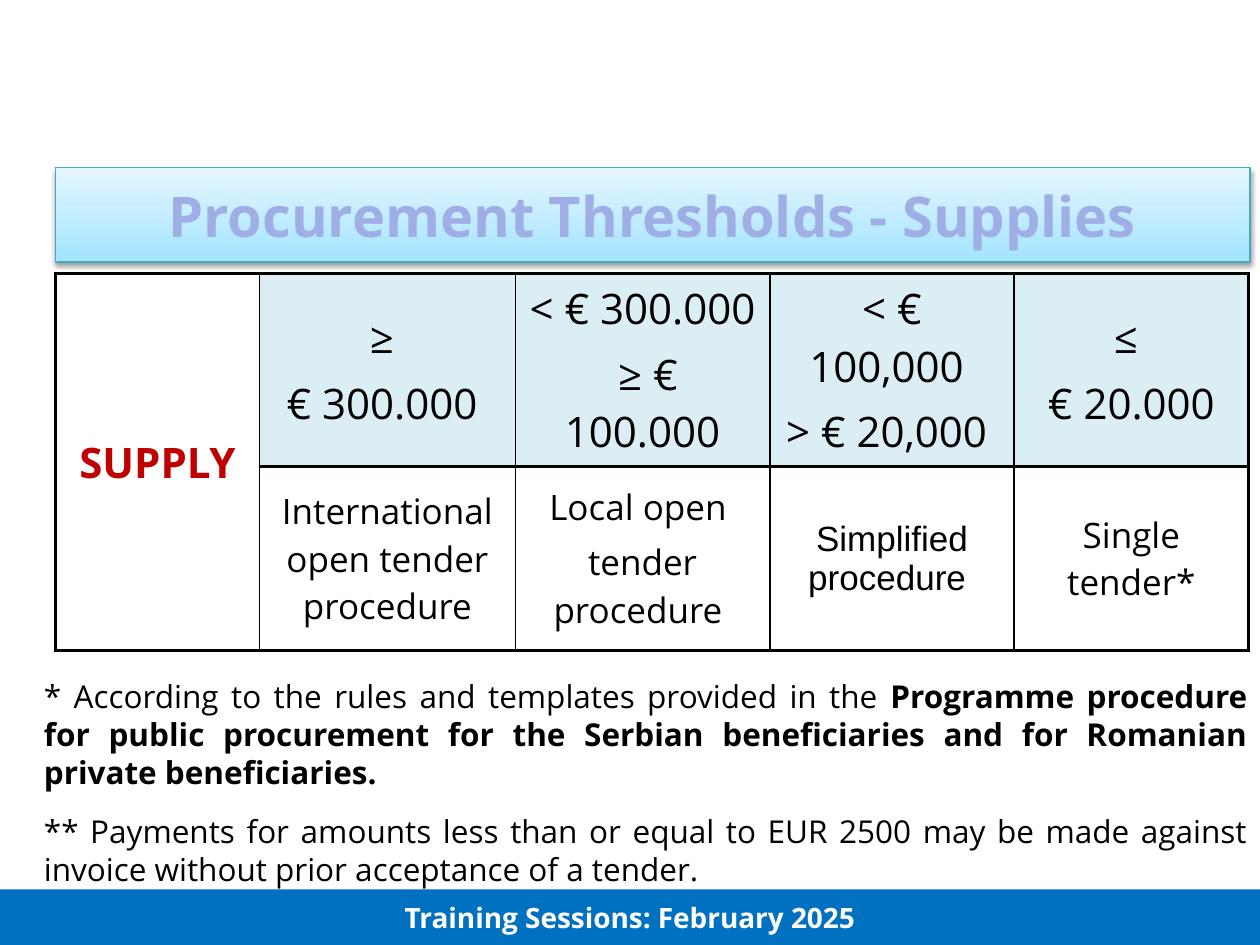
import dataclasses
import typing

import pptx
import pptx.dml.color
import pptx.enum.shapes
import pptx.enum.text
import pptx.oxml
import pptx.oxml.ns
import pptx.util

Inches = pptx.util.Inches
Pt = pptx.util.Pt
Align = pptx.enum.text.PP_ALIGN
MIDDLE = pptx.enum.text.MSO_ANCHOR.MIDDLE


@dataclasses.dataclass(frozen=True)
class Theme:
    font: str = "Open Sans"
    alternate_font: str = "Arial"
    black: str = "000000"
    white: str = "FFFFFF"
    supply_red: str = "C00000"
    threshold_fill: str = "DBEEF4"
    footer_blue: str = "0070C0"
    title_text: str = "9FAEE5"
    title_top: str = "E5F6FF"
    title_bottom: str = "A3E4FF"
    title_edge: str = "46AAC5"
    title_size: float = 32
    threshold_size: float = 24
    procedure_size: float = 20
    note_size: float = 18
    footer_size: float = 16
    thin: float = 1
    thick: float = 2.25


THEME = Theme()


@dataclasses.dataclass(frozen=True)
class Tender:
    width: float
    thresholds: tuple[str, ...]
    procedure: tuple[str, ...]
    procedure_font: str = THEME.font


TENDERS = (
    Tender(2.03, ("≥ ", "€ 300.000 "), ("International open tender procedure",)),
    Tender(2.02, ("< € 300.000 ", " ≥ € 100.000"), ("Local open ", "tender procedure ")),
    Tender(1.94, ("< € 100,000 ", "> € 20,000 "), ("Simplified procedure ",), THEME.alternate_font),
    Tender(1.86, ("≤ ", "€ 20.000"), ("Single tender*",)),
)
SUPPLY_WIDTH = 1.62
ROW_HEIGHTS = (1.26, 1.46)

NOTES = (
    (
        ("* According to the rules and templates provided in the ", False),
        ("Programme procedure for public procurement for the Serbian beneficiaries "
         "and for Romanian private beneficiaries.", True),
    ),
    (
        ("** Payments for amounts less than or equal to EUR 2500 may be made against "
         "invoice without prior acceptance of a tender.", False),
    ),
)


def rgb(value: str) -> pptx.dml.color.RGBColor:
    return pptx.dml.color.RGBColor.from_string(value)


def write(frame, paragraphs: typing.Sequence, *, size: float, color: str = THEME.black,
          font: str = THEME.font, bold: bool = False, align=Align.CENTER,
          gap: float = 0) -> None:
    """Fill a text frame; a paragraph is a string or a series of (text, bold) runs."""
    frame.word_wrap = True
    for index, content in enumerate(paragraphs):
        paragraph = frame.add_paragraph() if index else frame.paragraphs[0]
        paragraph.alignment = align
        paragraph.space_before = Pt(gap if index else 0)
        runs = ((content, bold),) if isinstance(content, str) else content
        for text, run_bold in runs:
            run = paragraph.add_run()
            run.text = text
            run.font.name = font
            run.font.size = Pt(size)
            run.font.bold = run_bold
            run.font.color.rgb = rgb(color)


def add_title(slide) -> None:
    title = slide.shapes.title
    title.left, title.top = Inches(0.44), Inches(1.33)
    title.width, title.height = Inches(9.48), Inches(0.75)
    title.fill.gradient()
    title.fill.gradient_angle = 270
    for stop, color in zip(title.fill.gradient_stops, (THEME.title_top, THEME.title_bottom)):
        stop.color.rgb = rgb(color)
    title.fill.gradient_stops[0].position = 0
    title.fill.gradient_stops[1].position = 1
    title.line.color.rgb = rgb(THEME.title_edge)
    title.line.width = Pt(0.75)
    title._element.spPr.append(pptx.oxml.parse_xml(
        f'<a:effectLst {pptx.oxml.ns.nsdecls("a")}>'
        '<a:outerShdw blurRad="40000" dist="20000" dir="5400000" rotWithShape="0">'
        f'<a:srgbClr val="{THEME.black}"><a:alpha val="38000"/></a:srgbClr>'
        '</a:outerShdw></a:effectLst>'))
    frame = title.text_frame
    frame.auto_size = pptx.enum.text.MSO_AUTO_SIZE.NONE
    frame.vertical_anchor = MIDDLE
    write(frame, ["Procurement Thresholds - Supplies"], size=THEME.title_size,
          color=THEME.title_text, bold=True)


def set_borders(cell, left: float, right: float) -> None:
    """Draw thick horizontal edges and the given side edges, ahead of the cell fill."""
    properties = cell._tc.get_or_add_tcPr()
    edges = {"lnL": left, "lnR": right, "lnT": THEME.thick, "lnB": THEME.thick}
    for position, (edge, width) in enumerate(edges.items()):
        properties.insert(position, pptx.oxml.parse_xml(
            f'<a:{edge} {pptx.oxml.ns.nsdecls("a")} w="{Pt(width)}">'
            f'<a:solidFill><a:srgbClr val="{THEME.black}"/></a:solidFill></a:{edge}>'))


def style_cell(cell, fill: str, paragraphs: typing.Sequence[str], *, size: float, **text) -> None:
    cell.vertical_anchor = MIDDLE
    cell.fill.solid()
    cell.fill.fore_color.rgb = rgb(fill)
    write(cell.text_frame, paragraphs, size=size, gap=0.2 * size, **text)


def add_thresholds(slide) -> None:
    widths = [SUPPLY_WIDTH] + [tender.width for tender in TENDERS]
    table = slide.shapes.add_table(
        len(ROW_HEIGHTS), len(widths), Inches(0.44), Inches(2.17),
        Inches(sum(widths)), Inches(sum(ROW_HEIGHTS))).table
    table.first_row = table.horz_banding = False
    for column, width in zip(table.columns, widths):
        column.width = Inches(width)
    for row, height in zip(table.rows, ROW_HEIGHTS):
        row.height = Inches(height)

    table.cell(0, 0).merge(table.cell(1, 0))
    style_cell(table.cell(0, 0), THEME.white, ["SUPPLY"], size=THEME.threshold_size,
               color=THEME.supply_red, bold=True)
    for column, tender in enumerate(TENDERS, start=1):
        style_cell(table.cell(0, column), THEME.threshold_fill, tender.thresholds,
                   size=THEME.threshold_size)
        style_cell(table.cell(1, column), THEME.white, tender.procedure,
                   size=THEME.procedure_size, font=tender.procedure_font)

    last = len(widths) - 1
    for row in range(len(ROW_HEIGHTS)):
        for column in range(len(widths)):
            set_borders(table.cell(row, column),
                        left=THEME.thin if column else THEME.thick,
                        right=THEME.thin if column < last else THEME.thick)


def add_notes_text(slide) -> None:
    frame = slide.shapes.add_textbox(
        Inches(0.25), Inches(5.5), Inches(9.75), Inches(1.42)).text_frame
    frame.vertical_anchor = MIDDLE
    write(frame, NOTES, size=THEME.note_size, align=Align.JUSTIFY, gap=12)


def add_footer(slide) -> None:
    band = slide.shapes.add_shape(
        pptx.enum.shapes.MSO_SHAPE.RECTANGLE, 0, Inches(7.06), Inches(10), Inches(0.44))
    band.shadow.inherit = False
    band.fill.solid()
    band.fill.fore_color.rgb = rgb(THEME.footer_blue)
    band.line.fill.background()
    band.text_frame.vertical_anchor = MIDDLE
    write(band.text_frame, ["Training Sessions: February 2025"], size=THEME.footer_size,
          color=THEME.white, bold=True)


def main() -> None:
    presentation = pptx.Presentation()
    presentation.slide_width, presentation.slide_height = Inches(10), Inches(7.5)
    slide = presentation.slides.add_slide(presentation.slide_layouts[5])
    add_footer(slide)
    add_title(slide)
    add_thresholds(slide)
    add_notes_text(slide)
    presentation.save("out.pptx")


if __name__ == "__main__":
    main()
